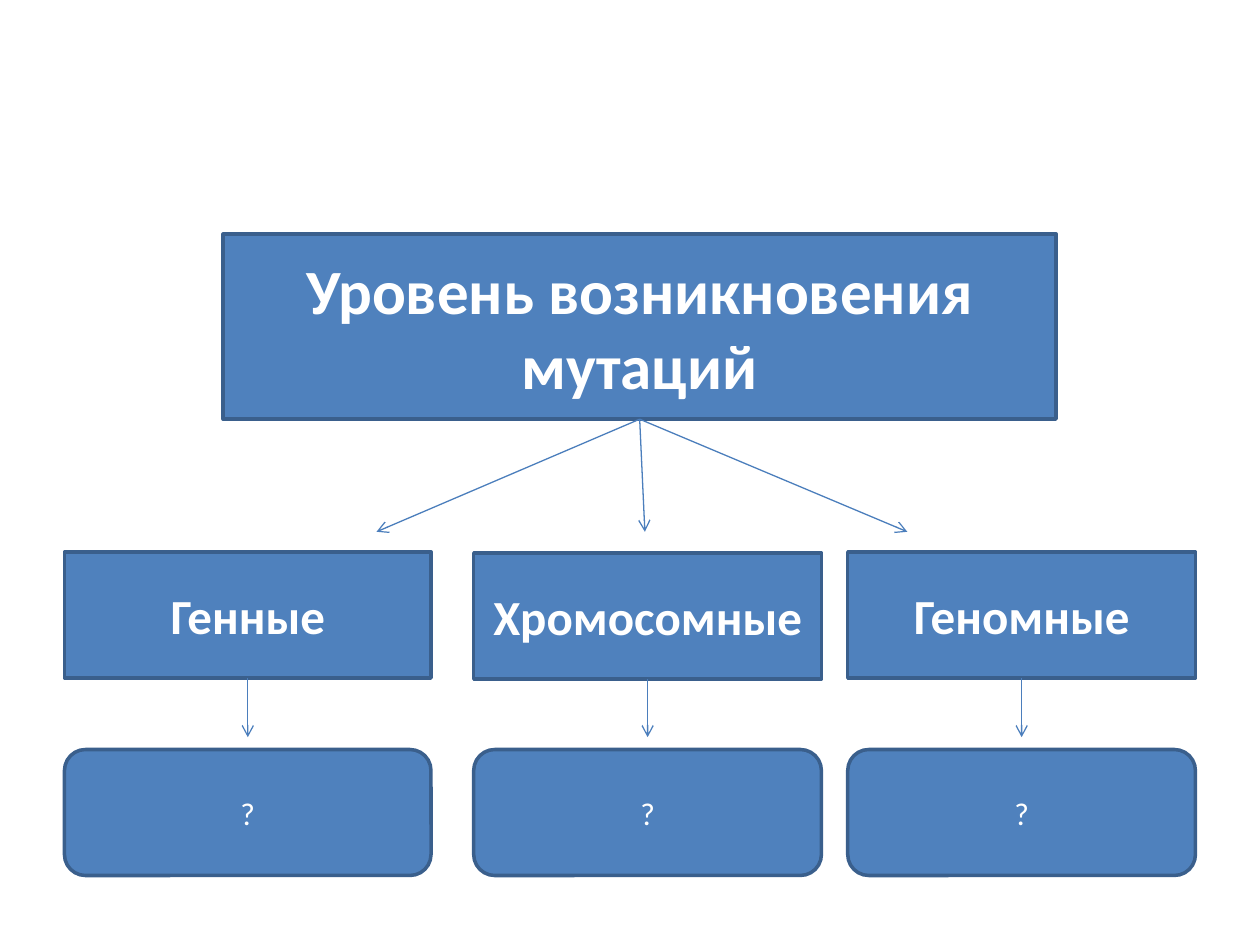
from dataclasses import dataclass

import pptx
import pptx.dml.color
import pptx.enum.shapes
import pptx.enum.text
import pptx.oxml
import pptx.oxml.ns
import pptx.util

Cm = pptx.util.Cm
Pt = pptx.util.Pt
RGB = pptx.dml.color.RGBColor
Preset = pptx.enum.shapes.MSO_SHAPE


@dataclass(frozen=True)
class Theme:
    font: str = "Calibri"
    fill: RGB = RGB(0x4F, 0x81, 0xBD)
    outline: RGB = RGB(0x3A, 0x5F, 0x8C)
    arrow: RGB = RGB(0x4B, 0x7E, 0xBC)
    text: RGB = RGB(0xFF, 0xFF, 0xFF)
    heading_size: int = 36
    level_size: int = 28
    answer_size: int = 18
    outline_width: float = 2
    arrow_width: float = 0.75


THEME = Theme()

HEADING = "Уровень возникновения мутаций"
ANSWER = "?"
# Level name, left, top, width, x where the arrow from the heading ends (cm)
LEVELS = [
    ("Генные", 1.3, 11.13, 7.39, 7.59),
    ("Хромосомные", 9.55, 11.15, 7.01, 13.0),
    ("Геномные", 17.09, 11.13, 7.01, 18.29),
]
HEADING_BOX = (4.5, 4.72, 16.79, 3.73)
BOX_HEIGHT = 2.54
HEADING_ARROW_END = 10.72
ANSWER_TOP = 15.11
ANSWER_ARROW_END = 14.86
BOTTOM_SITE = 2


def add_box(slide, preset, box, label, size, bold=True):
    shape = slide.shapes.add_shape(preset, *(Cm(length) for length in box))
    shape.shadow.inherit = False
    shape.fill.solid()
    shape.fill.fore_color.rgb = THEME.fill
    shape.line.color.rgb = THEME.outline
    shape.line.width = Pt(THEME.outline_width)
    frame = shape.text_frame
    frame.word_wrap = True
    frame.vertical_anchor = pptx.enum.text.MSO_ANCHOR.MIDDLE
    paragraph = frame.paragraphs[0]
    paragraph.alignment = pptx.enum.text.PP_ALIGN.CENTER
    run = paragraph.add_run()
    run.text = label
    run.font.name = THEME.font
    run.font.size = Pt(size)
    run.font.bold = bold
    run.font.color.rgb = THEME.text
    return shape


def add_arrow_below(slide, box, end_x, end_y):
    """Draw an arrow from the middle of the box's bottom side to a point."""
    arrow = slide.shapes.add_connector(
        pptx.enum.shapes.MSO_CONNECTOR.STRAIGHT,
        box.left + box.width // 2, box.top + box.height, end_x, end_y)
    arrow.begin_connect(box, BOTTOM_SITE)
    arrow.line.color.rgb = THEME.arrow
    arrow.line.width = Pt(THEME.arrow_width)
    head = pptx.oxml.parse_xml(
        f'<a:tailEnd {pptx.oxml.ns.nsdecls("a")} type="arrow"/>')
    arrow.line._get_or_add_ln().append(head)
    arrow._element.spPr.append(
        pptx.oxml.parse_xml(f'<a:effectLst {pptx.oxml.ns.nsdecls("a")}/>'))


def main():
    presentation = pptx.Presentation()
    presentation.slide_width = Cm(25.4)
    presentation.slide_height = Cm(19.05)
    slide = presentation.slides.add_slide(presentation.slide_layouts[6])

    heading = add_box(slide, Preset.RECTANGLE, HEADING_BOX, HEADING,
                      THEME.heading_size)
    for name, left, top, width, arrow_x in LEVELS:
        level = add_box(slide, Preset.RECTANGLE,
                        (left, top, width, BOX_HEIGHT), name, THEME.level_size)
        add_box(slide, Preset.ROUNDED_RECTANGLE,
                (left, ANSWER_TOP, width, BOX_HEIGHT), ANSWER,
                THEME.answer_size, bold=False)
        add_arrow_below(slide, heading, Cm(arrow_x), Cm(HEADING_ARROW_END))
        add_arrow_below(slide, level, level.left + level.width // 2,
                        Cm(ANSWER_ARROW_END))

    presentation.save("out.pptx")


if __name__ == "__main__":
    main()
